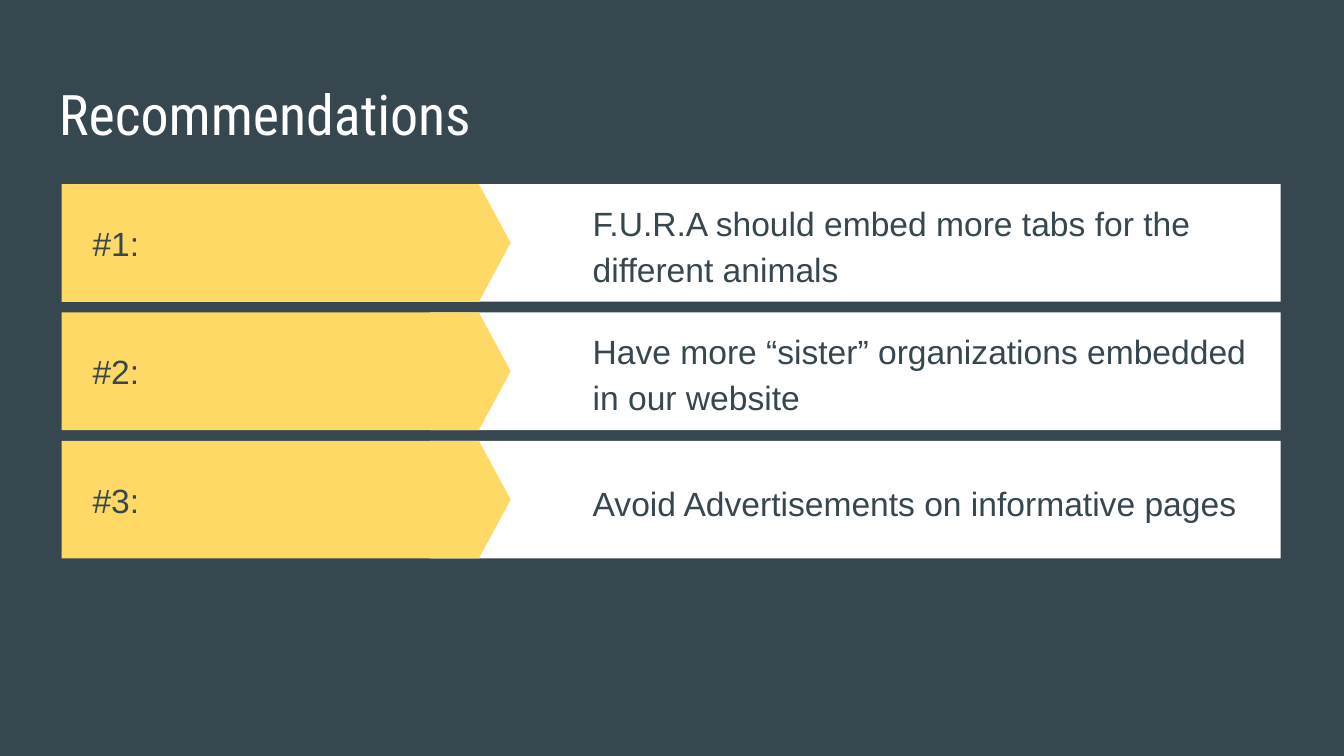
from dataclasses import dataclass

from pptx import Presentation
from pptx.dml.color import RGBColor
from pptx.enum.shapes import MSO_SHAPE
from pptx.enum.text import MSO_ANCHOR
from pptx.util import Inches, Pt

RECT = MSO_SHAPE.RECTANGLE
ARROW = MSO_SHAPE.PENTAGON
TOP = MSO_ANCHOR.TOP
MIDDLE = MSO_ANCHOR.MIDDLE


@dataclass(frozen=True)
class Theme:
    dark: str = "37474F"
    light: str = "FFFFFF"
    accent: str = "FFD966"
    head: str = "Roboto Condensed"
    body: str = "Arial"
    large: int = 30
    small: int = 18


THEME = Theme()
WIDTH = 10
HEIGHT = WIDTH * 9 / 16
FIRST, TALL, GAP = 1.37, 7 / 8, 0.08
PAD, INDENT = 0.1, 0.5
TIP = 0.27

ADVICE = [
    "F.U.R.A should embed more tabs for the different animals",
    "Have more “sister” organizations embedded in our website",
    "Avoid Advertisements on informative pages",
]


def paint(fill, color):
    fill.solid()
    fill.fore_color.rgb = RGBColor.from_string(color)


def add_block(group, kind, box, color):
    block = group.shapes.add_shape(kind, *map(Inches, box))
    block.shadow.inherit = False
    paint(block.fill, color)
    block.line.fill.background()
    return block


def add_text(slide, box, words, font, size, color, anchor=MIDDLE, indent=0, space=1.0):
    frame = slide.shapes.add_textbox(*map(Inches, box)).text_frame
    frame.word_wrap = True
    frame.vertical_anchor = anchor
    frame.margin_left = Inches(PAD + indent)
    frame.margin_right = frame.margin_top = frame.margin_bottom = Inches(PAD)
    para = frame.paragraphs[0]
    para.line_spacing = space
    run = para.add_run()
    run.text = words
    run.font.name = font
    run.font.size = Pt(size)
    run.font.color.rgb = RGBColor.from_string(color)


def add_row(slide, index, words):
    top = FIRST + index * (TALL + GAP)
    group = slide.shapes.add_group_shape()
    add_block(group, RECT, (3.2, top, 6.33, TALL), THEME.light)
    arrow = add_block(group, ARROW, (0.46, top, 3.34, TALL), THEME.accent)
    arrow.adjustments[0] = TIP
    style = THEME.body, THEME.small, THEME.dark
    add_text(slide, (0.59, top, 2.65, TALL), f"#{index + 1}:", *style)
    add_text(slide, (3.81, top, 5.59, TALL), words, *style, indent=INDENT, space=1.15)


def main():
    deck = Presentation()
    deck.slide_width = Inches(WIDTH)
    deck.slide_height = Inches(HEIGHT)
    slide = deck.slides.add_slide(deck.slide_layouts[6])
    paint(slide.background.fill, THEME.dark)
    add_text(slide, (0.34, 0.49, 9.32, 0.63), "Recommendations",
             THEME.head, THEME.large, THEME.light, anchor=TOP)
    for index, words in enumerate(ADVICE):
        add_row(slide, index, words)
    deck.save("out.pptx")


if __name__ == "__main__":
    main()
